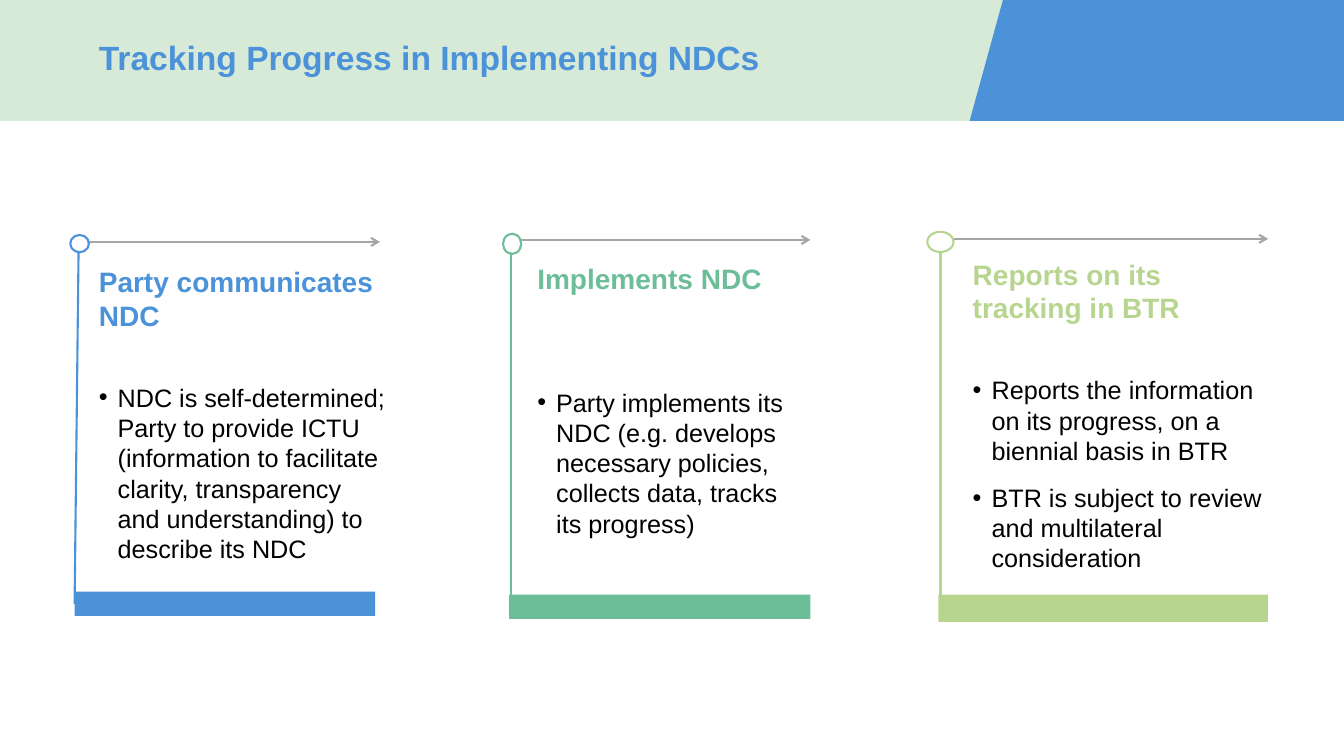
from lxml import etree
from pptx import Presentation
from pptx.dml.color import RGBColor
from pptx.enum import shapes, text
from pptx.oxml import ns
from pptx.util import Pt

theme = {
    "font": "Arial", "blue": "4B92D8", "teal": "6CBE99", "lime": "B8D590",
    "mint": "D7EAD7", "grey": "A6A6A6", "white": "FFFFFF", "black": "000000",
    "title": 24, "head": 20, "body": 18, "line": 1.5,
}


def paint(item, fill, edge=None):
    item.shadow.inherit = False
    item.fill.solid()
    item.fill.fore_color.rgb = RGBColor.from_string(theme[fill])
    if edge:
        item.line.color.rgb = RGBColor.from_string(theme[edge])
        item.line.width = Pt(theme["line"])
    else:
        item.line.fill.background()


def write(para, words, size, tone, bold, **gaps):
    for key, val in gaps.items():
        setattr(para, key, val)
    run = para.add_run()
    run.text = words
    form = {"name": theme["font"], "size": Pt(theme[size]), "bold": bold}
    for key, val in form.items():
        setattr(run.font, key, val)
    run.font.color.rgb = RGBColor.from_string(theme[tone])


deck = Presentation()
deck.slide_width, deck.slide_height = Pt(960), Pt(540)
slide = deck.slides.add_slide(deck.slide_layouts[6])

band = slide.shapes.add_shape(shapes.MSO_SHAPE.RECTANGLE, 0, 0, Pt(960), Pt(86.4))
paint(band, "mint")
pen = slide.shapes.build_freeform(Pt(692.6), Pt(86.4))
pen.add_line_segments([(Pt(716.4), 0), (Pt(960), 0), (Pt(960), Pt(86.4))], close=True)
paint(pen.convert_to_shape(), "blue")

zero = {"margin_left": 0, "margin_top": 0, "margin_right": 0, "word_wrap": True}
box = slide.shapes.add_textbox(Pt(70.6), Pt(20.9), Pt(602.6), Pt(43.9))
for key, val in {**zero, "margin_bottom": 0, "vertical_anchor": text.MSO_ANCHOR.MIDDLE}.items():
    setattr(box.text_frame, key, val)
write(box.text_frame.paragraphs[0], "Tracking Progress in Implementing NDCs",
      "title", "blue", True, line_spacing=0.9)

steps = [
    {
        "tone": "blue", "head": "Party communicates NDC", "gap": 36,
        "notes": ["NDC is self-determined; Party to provide ICTU (information to facilitate "
                  "clarity, transparency and understanding) to describe its NDC"],
        "arrow": (57.6, 172.8, 271.4, 172.8), "stem": (53.3, 431.3, 56.2, 172.8),
        "box": (70.6, 186.5, 206.6, 219.6), "anchor": text.MSO_ANCHOR.BOTTOM,
        "bar": (53.3, 422.6, 214.6, 17.3), "ring": (50.2, 167.8, 13.3, 12.4),
    },
    {
        "tone": "teal", "head": "Implements NDC", "gap": 66,
        "notes": ["Party implements its NDC (e.g. develops necessary policies, "
                  "collects data, tracks its progress)"],
        "arrow": (363.6, 171.4, 578.9, 171.4), "stem": (365, 442.1, 365, 167),
        "box": (383.8, 186.5, 192.2, 203.8), "anchor": text.MSO_ANCHOR.TOP,
        "bar": (363.6, 424.8, 215.3, 17.3), "ring": (359.3, 167, 13, 14.4),
    },
    {
        "tone": "lime", "head": "Reports on its tracking in BTR", "gap": 36,
        "notes": ["Reports the information on its progress, on a biennial basis in BTR",
                  "BTR is subject to review and multilateral consideration"],
        "arrow": (670.3, 170.6, 905.8, 170.6), "stem": (671.8, 444.2, 671.8, 180),
        "box": (694.8, 183.6, 215.3, 231.1), "anchor": text.MSO_ANCHOR.TOP,
        "bar": (670.3, 424.8, 235.4, 19.4), "ring": (662.4, 165.6, 18.7, 14.4),
    },
]

for step in steps:
    group = slide.shapes.add_group_shape().shapes
    tone = step["tone"]

    for part, ink in (("arrow", "grey"), ("stem", tone)):
        line = group.add_connector(shapes.MSO_CONNECTOR.STRAIGHT, *map(Pt, step[part]))
        line.line.color.rgb = RGBColor.from_string(theme[ink])
        line.line.width = Pt(theme["line"])
        if part == "arrow":
            etree.SubElement(line.line._get_or_add_ln(), ns.qn("a:tailEnd"), type="arrow")
        etree.SubElement(line._element.spPr, ns.qn("a:effectLst"))

    box = group.add_textbox(*map(Pt, step["box"]))
    frame = box.text_frame
    for key, val in {**zero, "margin_bottom": Pt(3.6), "vertical_anchor": step["anchor"]}.items():
        setattr(frame, key, val)
    write(frame.paragraphs[0], step["head"], "head", tone, True,
          line_spacing=Pt(24), space_after=Pt(step["gap"]))
    for note in step["notes"]:
        para = frame.add_paragraph()
        prop = para._p.get_or_add_pPr()
        prop.set("marL", str(Pt(13.5)))
        prop.set("indent", str(Pt(-13.5)))
        etree.SubElement(prop, ns.qn("a:buFont"), typeface=theme["font"])
        etree.SubElement(prop, ns.qn("a:buChar"), char="•")
        write(para, note, "body", "black", False, line_spacing=Pt(21.6), space_after=Pt(12))

    bar = group.add_shape(shapes.MSO_SHAPE.RECTANGLE, *map(Pt, step["bar"]))
    paint(bar, tone)
    ring = group.add_shape(shapes.MSO_SHAPE.OVAL, *map(Pt, step["ring"]))
    paint(ring, "white", tone)

deck.save("out.pptx")
